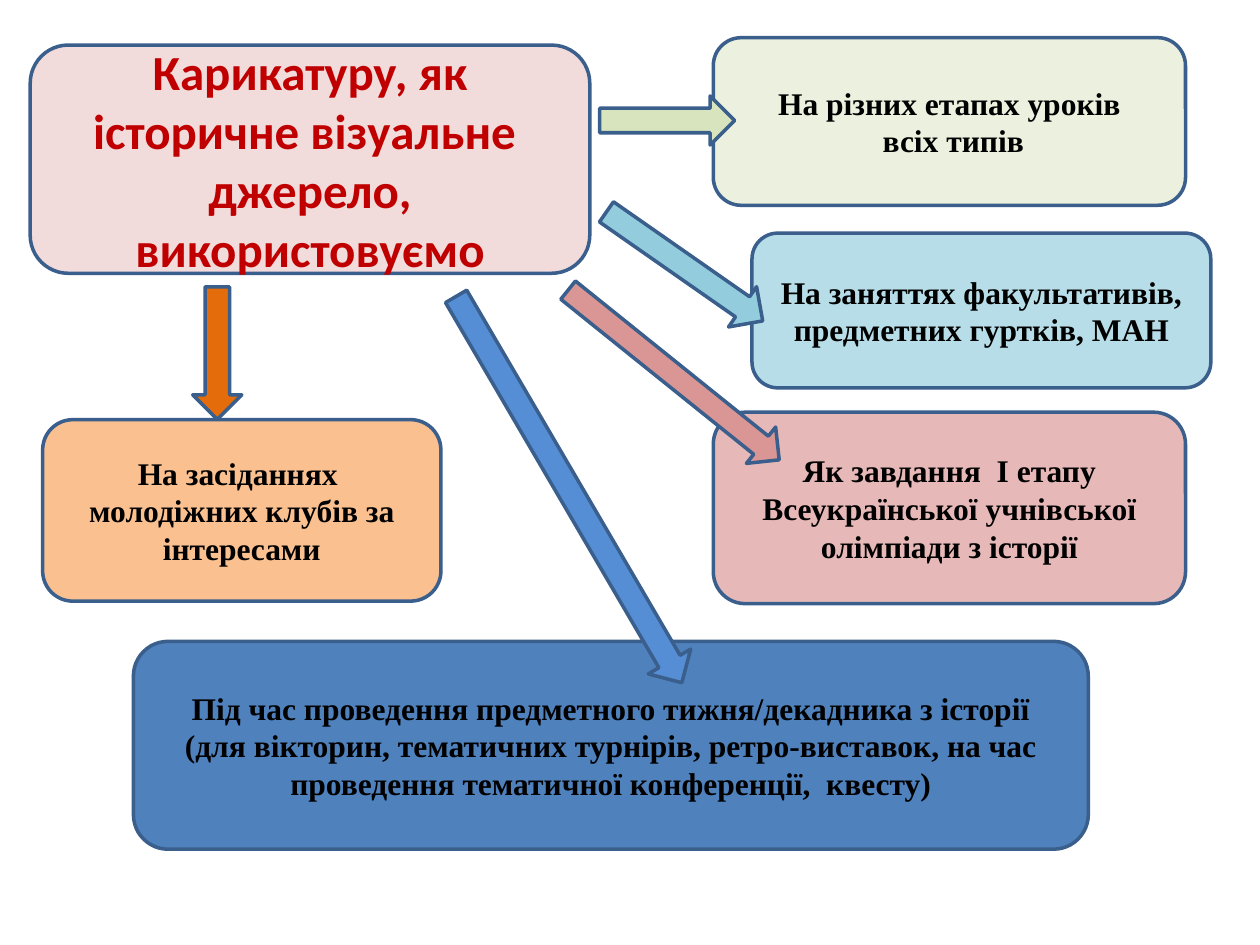
from pptx import Presentation
from pptx.dml.color import RGBColor as RGB
from pptx.enum.shapes import MSO_SHAPE as Shape
from pptx.enum.text import MSO_ANCHOR as Anchor, PP_ALIGN as Align
from pptx.util import Cm, Pt

THEME = {
    "line": "3A5F8C",
    "line_width": 2,
    "title": ("Calibri", 28, "C00000"),
    "body": ("Times New Roman", 18, "000000"),
}

BOXES = [
    ("title", "F2DCDB", (0.61, 0.91, 11.28, 4.6),
     ["Карикатуру, як історичне візуальне  джерело, використовуємо"]),
    ("body", "EBF1DE", (14.38, 0.76, 9.52, 3.38),
     ["На різних етапах уроків", " всіх типів"]),
    ("body", "FAC090", (0.86, 8.46, 8.03, 3.66),
     ["На засіданнях  молодіжних клубів за інтересами"]),
    ("body", "E6B9B8", (14.38, 8.31, 9.52, 3.86),
     ["Як завдання  І етапу Всеукраїнської учнівської олімпіади з історії"]),
    ("body", "4F81BD", (2.69, 12.93, 19.25, 4.19),
     ["Під час проведення предметного тижня/декадника з історії",
      "(для вікторин, тематичних турнірів, ретро-виставок, на час "
      "проведення тематичної конференції,  квесту)"]),
    ("body", "B7DEE8", (15.16, 4.7, 9.25, 3.12),
     ["На заняттях факультативів, предметних гуртків, МАН"]),
]

# fill, centre x, centre y, length, thickness, angle
ARROWS = [
    ("D7E4BD", 13.45, 2.43, 2.72, 0.99, 0),
    ("93CDDD", 13.8, 5.37, 3.84, 0.99, 34.9),
    ("E46C0A", 4.38, 7.12, 2.67, 0.99, 90),
    ("D99694", 13.58, 7.56, 5.46, 0.94, 38.8),
    ("558ED5", 11.47, 9.87, 9.02, 0.99, 59.7),
]


def add_block(s, kind, fill, place):
    sp = s.shapes.add_shape(kind, *map(Cm, place))
    sp.shadow.inherit = False
    sp.fill.solid()
    sp.fill.fore_color.rgb = RGB.from_string(fill)
    sp.line.color.rgb = RGB.from_string(THEME["line"])
    sp.line.width = Pt(THEME["line_width"])
    return sp


def add_box(s, style, fill, place, lines):
    tf = add_block(s, Shape.ROUNDED_RECTANGLE, fill, place).text_frame
    tf.word_wrap = True
    tf.vertical_anchor = Anchor.MIDDLE
    tf.text = "\n".join(lines)
    font, size, color = THEME[style]
    for p in tf.paragraphs:
        p.alignment = Align.CENTER
        for r in p.runs:
            r.font.name = font
            r.font.size = Pt(size)
            r.font.bold = True
            r.font.color.rgb = RGB.from_string(color)


def add_arrow(s, fill, x, y, length, thickness, angle):
    place = (x - length / 2, y - thickness / 2, length, thickness)
    add_block(s, Shape.RIGHT_ARROW, fill, place).rotation = angle


def main():
    prs = Presentation()
    prs.slide_width, prs.slide_height = Cm(25.4), Cm(19.05)
    s = prs.slides.add_slide(prs.slide_layouts[6])
    for box in BOXES:
        add_box(s, *box)
    for arrow in ARROWS:
        add_arrow(s, *arrow)
    prs.save("out.pptx")


if __name__ == "__main__":
    main()
